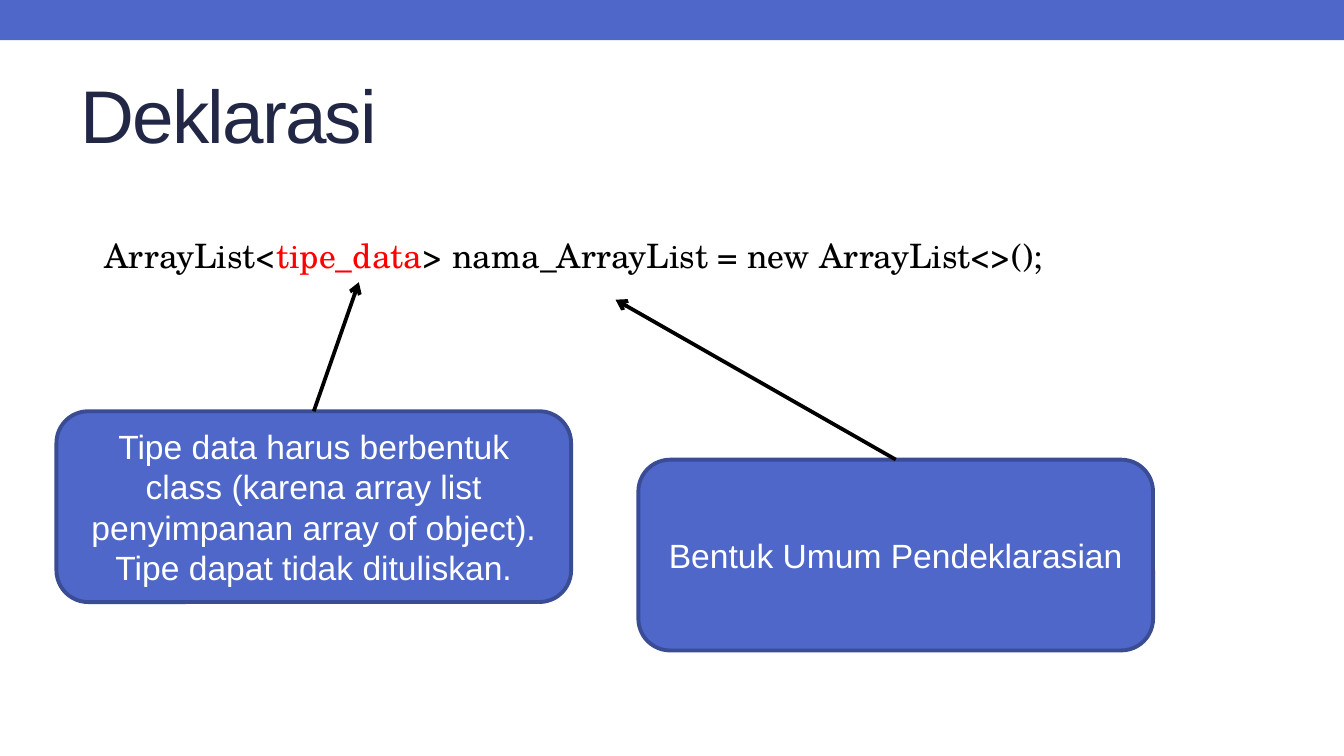
from dataclasses import dataclass

import pptx
import pptx.dml.color
import pptx.enum.shapes
import pptx.enum.text
import pptx.oxml
import pptx.oxml.ns
import pptx.util
from pptx.util import Inches

COLORS = {
    "blue": "4E67C8",
    "outline": "3A4C94",
    "navy": "212745",
    "black": "000000",
    "red": "FF0000",
    "white": "FFFFFF",
}
BODY_FONT = "Arial"
CODE_FONT = "TeX Gyre Schola"
SLIDE_WIDTH = 10
SLIDE_HEIGHT = SLIDE_WIDTH * 9 / 16
NOTE_WIDTH, NOTE_HEIGHT = 3.83, 1.42


@dataclass(frozen=True)
class Note:
    """A rounded box whose arrow points at a part of the code line."""
    left: float
    top: float
    lines: tuple[str, ...]
    target: tuple[float, float]


NOTES = [
    Note(4.75, 3.42, ("Bentuk Umum Pendeklarasian",), (4.58, 2.23)),
    Note(0.42, 3.06,
         ("Tipe data harus berbentuk class (karena array list penyimpanan array of object).",
          "Tipe dapat tidak dituliskan."),
         (2.67, 2.1)),
]
DECLARATION = [
    ("ArrayList<", "black"),
    ("tipe_data", "red"),
    ("> nama_ArrayList = new ArrayList<>();", "black"),
]


def rgb(color: str) -> pptx.dml.color.RGBColor:
    return pptx.dml.color.RGBColor.from_string(COLORS[color])


def add_run(paragraph, text: str, size: float, color: str, font: str = BODY_FONT):
    run = paragraph.add_run()
    run.text = text
    run.font.size = pptx.util.Pt(size)
    run.font.name = font
    run.font.color.rgb = rgb(color)
    return run


def add_block(slide, kind, left: float, top: float, width: float, height: float):
    block = slide.shapes.add_shape(
        kind, Inches(left), Inches(top), Inches(width), Inches(height))
    block.shadow.inherit = False
    block.fill.solid()
    block.fill.fore_color.rgb = rgb("blue")
    return block


def add_arrow(slide, box, note: Note) -> None:
    start_x = note.left + NOTE_WIDTH / 2
    arrow = slide.shapes.add_connector(
        pptx.enum.shapes.MSO_CONNECTOR.STRAIGHT,
        Inches(start_x), Inches(note.top), *map(Inches, note.target))
    arrow.begin_connect(box, 0)
    arrow.line.color.rgb = rgb("black")
    arrow.line.width = pptx.util.Pt(2)
    # Arrowhead at the code line, and no theme shadow
    line = arrow.line._get_or_add_ln()
    head = pptx.oxml.ns.qn("a:tailEnd")
    line.append(line.makeelement(head, {"type": "arrow"}))
    properties = arrow._element.spPr
    properties.append(properties.makeelement(pptx.oxml.ns.qn("a:effectLst"), {}))


def add_note(slide, note: Note) -> None:
    box = add_block(slide, pptx.enum.shapes.MSO_SHAPE.ROUNDED_RECTANGLE,
                    note.left, note.top, NOTE_WIDTH, NOTE_HEIGHT)
    box.line.color.rgb = rgb("outline")
    box.line.width = pptx.util.Pt(2.08)
    frame = box.text_frame
    frame.word_wrap = True
    frame.vertical_anchor = pptx.enum.text.MSO_ANCHOR.MIDDLE
    for index, text in enumerate(note.lines):
        paragraph = frame.add_paragraph() if index else frame.paragraphs[0]
        paragraph.alignment = pptx.enum.text.PP_ALIGN.CENTER
        add_run(paragraph, text, 18, "white")
    add_arrow(slide, box, note)


def add_title(slide, text: str) -> None:
    title = slide.shapes.title
    title.left, title.top = Inches(0.5), Inches(0.44)
    title.width, title.height = Inches(9), Inches(0.81)
    frame = title.text_frame
    frame.auto_size = pptx.enum.text.MSO_AUTO_SIZE.NONE
    frame.vertical_anchor = pptx.enum.text.MSO_ANCHOR.MIDDLE
    paragraph = frame.paragraphs[0]
    paragraph.alignment = pptx.enum.text.PP_ALIGN.LEFT
    run = add_run(paragraph, text, 40, "navy")
    run.font._element.set("spc", "-100")


def add_declaration(slide) -> None:
    code = slide.shapes.add_textbox(
        Inches(0.68), Inches(1.7), Inches(7.35), Inches(0.4))
    frame = code.text_frame
    frame.word_wrap = False
    frame.auto_size = pptx.enum.text.MSO_AUTO_SIZE.SHAPE_TO_FIT_TEXT
    for text, color in DECLARATION:
        add_run(frame.paragraphs[0], text, 18, color, CODE_FONT)


def main() -> None:
    deck = pptx.Presentation()
    deck.slide_width, deck.slide_height = Inches(SLIDE_WIDTH), Inches(SLIDE_HEIGHT)
    slide = deck.slides.add_slide(deck.slide_layouts.get_by_name("Title Only"))

    # Top band
    band = add_block(slide, pptx.enum.shapes.MSO_SHAPE.RECTANGLE,
                     0, 0, SLIDE_WIDTH, 0.3)
    band.line.fill.background()

    # Title and code line
    add_title(slide, "Deklarasi")
    add_declaration(slide)

    # Explanations with arrows
    for note in NOTES:
        add_note(slide, note)

    deck.save("out.pptx")


if __name__ == "__main__":
    main()
